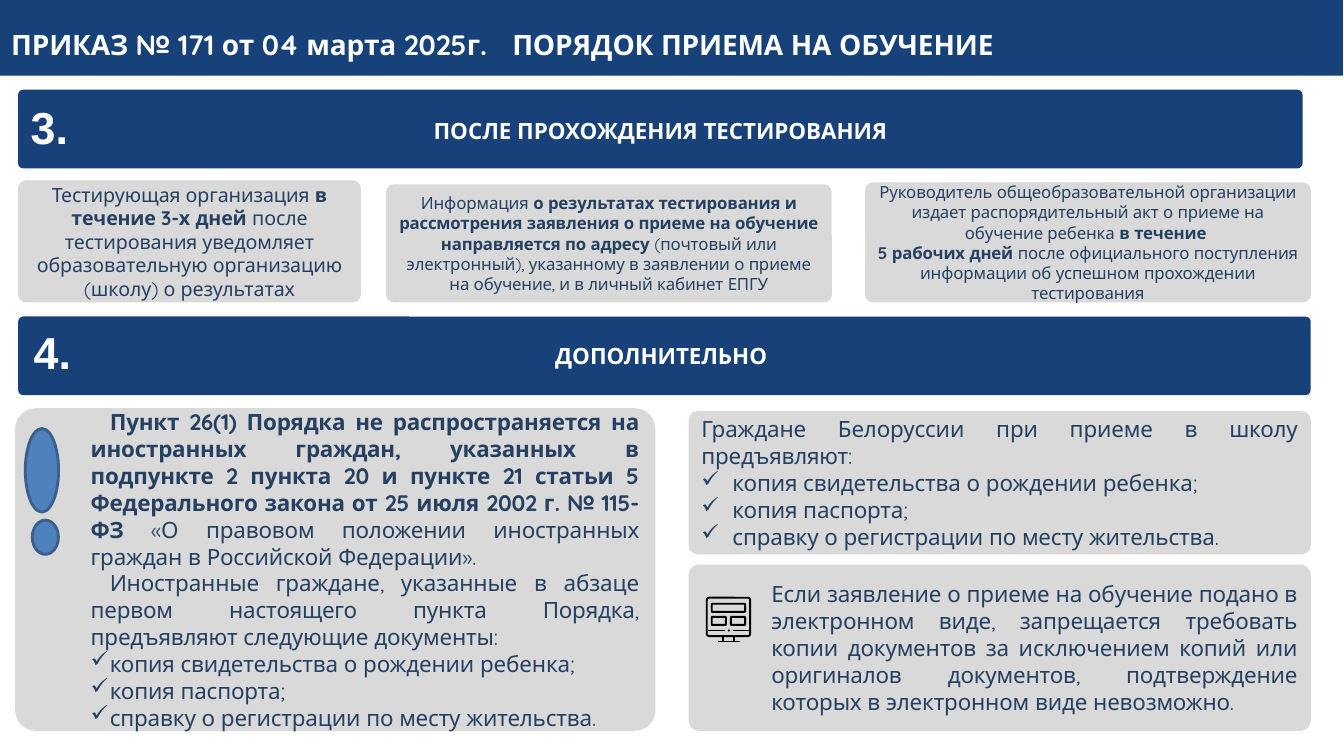
from pptx import Presentation, util as u
from pptx.dml.color import RGBColor
from pptx.enum import shapes, text
from pptx.oxml.ns import qn
from lxml import etree

# Theme: colours, type looks and paragraph formats
NAVY, GREY, BLUE, EDGE, BLACK = "184179", "D9D9D9", "4F81BD", "3A5F8C", "000000"
THEME = {
    "title": {"size": 20, "name": "Quicksand", "color": "FFFFFF", "bold": True, "spc": -10},
    "bar": {"size": 16, "name": "Quicksand", "color": "FFFFFF", "bold": True},
    "gap": {"size": 18, "name": "Calibri", "bold": False},
    "digit": {"size": 32, "name": "Arial", "color": "FFFFFF", "bold": True},
    "body": {"size": 16, "name": "Quicksand", "color": "254061", "bold": False, "spc": -10},
    "strong": {"bold": True},
}
LEFT = {"alignment": text.PP_ALIGN.LEFT}
MID = {"alignment": text.PP_ALIGN.CENTER}
JUST = {"alignment": text.PP_ALIGN.JUSTIFY}
KIND = shapes.MSO_SHAPE

deck = Presentation()
deck.slide_width, deck.slide_height = u.Inches(13.33), u.Inches(7.5)
slide = deck.slides.add_slide(deck.slide_layouts[6])
COL, ROW = deck.slide_width / 100, deck.slide_height / 100


def draw(kind, area, fill=None, line=None, width=1.4):
    """Add a shape, or a text box if kind is None; area is in percent of the slide."""
    x, y, w, h = area
    place = [round(n) for n in (x * COL, y * ROW, w * COL, h * ROW)]
    if kind is None:
        box = slide.shapes.add_textbox(*place)
        box.text_frame.word_wrap = True
        return box
    box = slide.shapes.add_shape(kind, *place)
    box.shadow.inherit = False
    if kind == KIND.ROUNDED_RECTANGLE:
        box.adjustments[0] = 0.064
    if fill:
        box.fill.solid()
        box.fill.fore_color.rgb = RGBColor.from_string(fill)
    else:
        box.fill.background()
    if line:
        box.line.color.rgb = RGBColor.from_string(line)
        box.line.width = u.Pt(width)
    else:
        box.line.fill.background()
    return box


def write(box, paras, look, alt="strong", anchor=text.MSO_ANCHOR.MIDDLE):
    """Fill a box; each | in a paragraph switches between look and alt."""
    frame = box.text_frame
    frame.vertical_anchor = anchor
    for i, (form, words) in enumerate(paras):
        para = frame.paragraphs[0] if i == 0 else frame.add_paragraph()
        props = para._p.get_or_add_pPr()
        for key, val in form.items():
            if key in ("marL", "indent"):
                props.set(key, str(u.Inches(val)))
            elif key == "bullet":
                etree.SubElement(props, qn("a:buChar"), char=val)
            elif key == "tab":
                tabs = etree.SubElement(props, qn("a:tabLst"))
                etree.SubElement(tabs, qn("a:tab"), pos=str(u.Inches(val)), algn="l")
            else:
                setattr(para, key, val)
        for j, part in enumerate(words.split("|")):
            if not part:
                continue
            run = para.add_run()
            run.text = part
            for key, val in {**look, **(THEME[alt] if j % 2 else {})}.items():
                if key == "color":
                    run.font.color.rgb = RGBColor.from_string(val)
                elif key == "spc":
                    run._r.get_or_add_rPr().set("spc", str(val))
                else:
                    setattr(run.font, key, u.Pt(val) if key == "size" else val)


# Header band and title
draw(KIND.RECTANGLE, (0, 0, 99.92, 10), "174179")
title = draw(None, (0.83, 3.33, 82.2, 4.67))
for side, pad in {"left": 0, "top": 0.02, "right": 0, "bottom": 0}.items():
    setattr(title.text_frame, "margin_" + side, u.Inches(pad))
write(title, [({**LEFT, "tab": 4.97},
               "ПРИКАЗ № 171 от 04 марта 2025г.\tПОРЯДОК ПРИЕМА НА ОБУЧЕНИЕ")],
      THEME["title"], anchor=text.MSO_ANCHOR.TOP)

# Section bars with their numbers
bars = [
    ("3.", 11.87, 95.57, 1.43, 12.53, "ПОСЛЕ| |ПРОХОЖДЕНИЯ| |ТЕСТИРОВАНИЯ"),
    ("4.", 41.87, 96.17, 1.65, 42.27, "ДОПОЛНИТЕЛЬНО "),
]
for num, top, wide, nx, ny, words in bars:
    bar = draw(KIND.ROUNDED_RECTANGLE, (1.35, top, wide, 10.4), NAVY)
    write(bar, [(MID, words)], THEME["bar"], "gap")
    write(draw(None, (nx, ny, 4.5, 8.53)), [({**MID, "space_after": u.Pt(6)}, num)],
          THEME["digit"], anchor=text.MSO_ANCHOR.TOP)

# Grey cards
papers = ["копия свидетельства о рождении ребенка;", "копия паспорта;",
          "справку о регистрации по месту жительства."]
wide = {**JUST, "marL": 0.31, "indent": -0.31, "bullet": "✓"}
tight = {**JUST, "marL": 0.78, "indent": -0.19, "bullet": "✓"}
lead = {**JUST, "marL": 0.59, "indent": 0.19}
cards = [
    ((1.35, 23.87, 25.5, 16.13), 14, [
        (MID, "Тестирующая организация |в течение 3-х дней |после тестирования уведомляет "
              "образовательную организацию (школу) о результатах")]),
    ((28.73, 24.4, 33.16, 15.6), 12, [
        (MID, "Информация |о результатах тестирования и рассмотрения заявления о приеме на "
              "обучение направляется по адресу |(почтовый или электронный), указанному в "
              "заявлении о приеме на обучение, и в личный кабинет ЕПГУ")]),
    ((64.37, 24.13, 33.16, 15.87), 12, [
        (MID, "Руководитель общеобразовательной организации издает распорядительный акт "
              "о приеме на обучение ребенка |в течение "),
        (MID, "|5 рабочих дней |после официального поступления информации об успешном "
              "прохождении тестирования")]),
    ((1.13, 54, 47.64, 42.67), 16, [
        (lead, "|Пункт 26(1) Порядка не распространяется на иностранных граждан, указанных в "
               "подпункте 2 пункта 20 и пункте 21 статьи 5 Федерального закона от 25 июля "
               "2002 г. № 115-ФЗ| «О правовом положении иностранных граждан в Российской "
               "Федерации»."),
        (lead, "Иностранные граждане, указанные в абзаце первом настоящего пункта Порядка, "
               "предъявляют следующие документы: ")] + [(tight, p) for p in papers]),
    ((51.24, 54.4, 46.29, 18.93), 16, [
        (JUST, "Граждане Белоруссии при приеме в школу предъявляют:")]
        + [(wide, p) for p in papers]),
    ((51.24, 74.67, 46.29, 22), 16, [
        ({**JUST, "marL": 0.69, "indent": 0},
         "Если заявление о приеме на обучение подано в электронном виде, запрещается требовать "
         "копии документов за исключением копий или оригиналов документов, подтверждение "
         "которых в электронном виде невозможно.")]),
]
for area, size, paras in cards:
    write(draw(KIND.ROUNDED_RECTANGLE, area, GREY), paras, {**THEME["body"], "size": size})

# Exclamation mark
for area in [(1.88, 56.67, 2.48, 11.07), (2.4, 68.8, 1.95, 4.53)]:
    draw(KIND.OVAL, area, BLUE, EDGE, 2)

# Computer icon: screen, panels, button, then its strokes
for area in [(52.59, 79.07, 3.23, 5.07), (52.96, 79.87, 2.48, 1.07),
             (52.96, 81.6, 1.05, 1.07), (54.39, 81.6, 1.05, 1.07)]:
    draw(KIND.ROUNDED_RECTANGLE, area, line=BLACK)
draw(KIND.OVAL, (54.16, 83.27, 0.15, 0.27), BLACK)
for x1, y1, x2, y2 in [(52.66, 83.4, 53.94, 83.4), (54.54, 83.4, 55.74, 83.4),
                       (53.79, 84.2, 53.79, 84.87), (54.61, 84.2, 54.61, 84.87),
                       (53.41, 84.87, 55.06, 84.87)]:
    ends = [round(n) for n in (x1 * COL, y1 * ROW, x2 * COL, y2 * ROW)]
    stroke = slide.shapes.add_connector(shapes.MSO_CONNECTOR.STRAIGHT, *ends)
    stroke.line.color.rgb = RGBColor.from_string(BLACK)
    stroke.line.width = u.Pt(1.2)
    etree.SubElement(stroke._element.spPr, qn("a:effectLst"))

deck.save("out.pptx")
